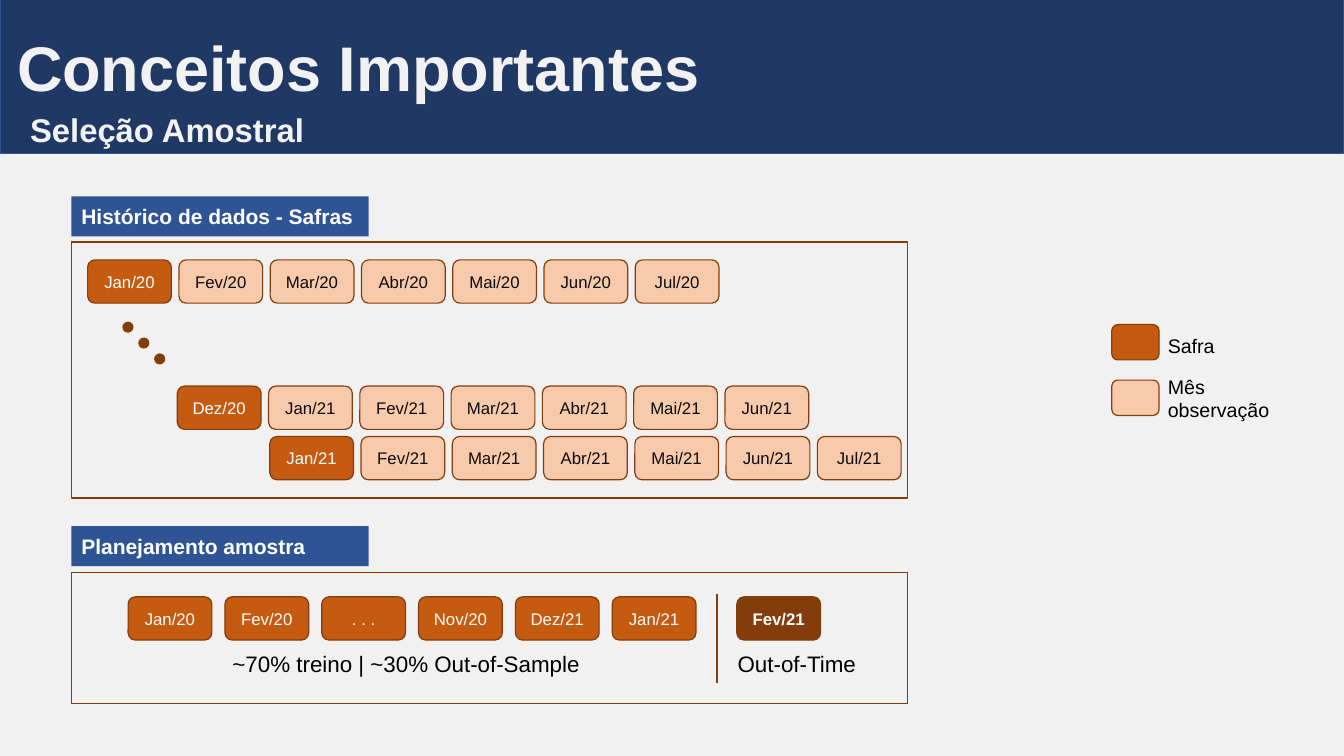
import pptx
import pptx.dml.color
import pptx.enum.shapes
import pptx.enum.text
import pptx.util
from lxml import etree

Cm, Pt = pptx.util.Cm, pptx.util.Pt
SHAPE = pptx.enum.shapes.MSO_SHAPE
ALIGN = pptx.enum.text.PP_ALIGN
ANCHOR = pptx.enum.text.MSO_ANCHOR

COLORS = {
    "background": "F2F1F1", "banner": "1F3864", "banner_edge": "31538F",
    "heading": "2F5496", "vintage": "C55A11", "month": "F7CAAC",
    "brown": "833C0B", "white": "FFFFFF", "light": "F2F2F2",
    "dark": "0C0C0C", "black": "000000",
}

BANNER_TEXTS = [
    ("Conceitos Importantes", (0.18, 0.66, 24.03, 2.08), 45),
    ("Seleção Amostral", (0.51, 2.46, 8.56, 1.42), 23.4),
]
SECTIONS = [
    ("Histórico de dados - Safras", 4.95, 6.1, 6.45),
    ("Planejamento amostra", 13.26, 14.43, 3.3),
]
VINTAGE_ROWS = [
    (2.21, 6.55, ["Jan/20", "Fev/20", "Mar/20", "Abr/20", "Mai/20", "Jun/20", "Jul/20"]),
    (4.47, 9.73, ["Dez/20", "Jan/21", "Fev/21", "Mar/21", "Abr/21", "Mai/21", "Jun/21"]),
    (6.8, 11, ["Jan/21", "Fev/21", "Mar/21", "Abr/21", "Mai/21", "Jun/21", "Jul/21"]),
]
SAMPLE_MONTHS = ["Jan/20", "Fev/20", ". . .", "Nov/20", "Dez/21", "Jan/21"]
OUT_OF_TIME_MONTH = "Fev/21"
SAMPLE_CAPTIONS = [
    ("~70% treino | ~30% Out-of-Sample", (5.61, 16.26, 10.8, 0.94)),
    ("Out-of-Time", (18.34, 16.26, 3.51, 0.94)),
]
LEGEND = [
    ("Safra", "vintage", 8.18, (29.18, 8.28, 2.39, 0.86)),
    ("Mês observação", "month", 9.58, (29.18, 9.32, 3.58, 1.45)),
]

SLIDE_WIDTH, SLIDE_HEIGHT = 33.87, 19.05
MONTH_WIDTH, MONTH_HEIGHT = 2.11, 1.09
VINTAGE_PITCH, SAMPLE_PITCH = 2.3, 2.44
SAMPLE_LEFT, SAMPLE_TOP, OUT_OF_TIME_LEFT = 3.23, 15.04, 18.57
PANEL_LEFT, PANEL_WIDTH = 1.8, 21.08
HEADING_WIDTH, HEADING_HEIGHT = 7.49, 1.01
DOT_LEFT, DOT_TOP, DOT_SIZE, DOT_STEP = 3.1, 8.12, 0.25, 0.4
DIVIDER_X, DIVIDER_TOP, DIVIDER_BOTTOM = 18.08, 14.96, 17.2


def rgb(name):
    return pptx.dml.color.RGBColor.from_string(COLORS[name])


def write(shape, text, size, color, bold=False, align=ALIGN.LEFT, anchor=ANCHOR.MIDDLE):
    frame = shape.text_frame
    frame.word_wrap = True
    frame.vertical_anchor = anchor
    frame.text = text
    paragraph = frame.paragraphs[0]
    paragraph.alignment = align
    font = paragraph.runs[0].font
    font.name, font.size, font.bold = "Arial", Pt(size), bold
    font.color.rgb = rgb(color)


def add_box(slide, preset, bounds, fill=None, line=None):
    box = slide.shapes.add_shape(preset, *map(Cm, bounds))
    box.shadow.inherit = False
    if fill:
        box.fill.solid()
        box.fill.fore_color.rgb = rgb(fill)
    else:
        box.fill.background()
    if line:
        box.line.color.rgb = rgb(line)
        box.line.width = Pt(0.85)
    else:
        box.line.fill.background()
    return box


def add_month(slide, left, top, month, fill, color="white", bold=False):
    bounds = (left, top, MONTH_WIDTH, MONTH_HEIGHT)
    box = add_box(slide, SHAPE.ROUNDED_RECTANGLE, bounds, fill, "brown")
    write(box, month, 12, color, bold, ALIGN.CENTER)


def add_label(slide, text, bounds, size, color="black", bold=False, anchor=ANCHOR.TOP):
    label = slide.shapes.add_textbox(*map(Cm, bounds))
    write(label, text, size, color, bold, anchor=anchor)


def add_divider(slide):
    divider = slide.shapes.add_connector(
        pptx.enum.shapes.MSO_CONNECTOR.STRAIGHT,
        Cm(DIVIDER_X), Cm(DIVIDER_TOP), Cm(DIVIDER_X), Cm(DIVIDER_BOTTOM))
    divider.line.color.rgb = rgb("brown")
    divider.line.width = Pt(1.5)
    etree.SubElement(divider._element.spPr, pptx.oxml.ns.qn("a:effectLst"))


def main():
    """Build the sample selection slide."""
    deck = pptx.Presentation()
    deck.slide_width, deck.slide_height = Cm(SLIDE_WIDTH), Cm(SLIDE_HEIGHT)
    slide = deck.slides.add_slide(deck.slide_layouts[6])
    slide.background.fill.solid()
    slide.background.fill.fore_color.rgb = rgb("background")

    add_box(slide, SHAPE.RECTANGLE, (0, -0.05, SLIDE_WIDTH, 3.91), "banner", "banner_edge")
    for text, bounds, size in BANNER_TEXTS:
        add_label(slide, text, bounds, size, "light", True, ANCHOR.BOTTOM)

    for title, heading_top, panel_top, panel_height in SECTIONS:
        heading = add_box(slide, SHAPE.RECTANGLE,
                          (PANEL_LEFT, heading_top, HEADING_WIDTH, HEADING_HEIGHT), "heading")
        write(heading, title, 15, "white", True)
        add_box(slide, SHAPE.RECTANGLE,
                (PANEL_LEFT, panel_top, PANEL_WIDTH, panel_height), line="brown")

    for left, top, (vintage, *months) in VINTAGE_ROWS:
        add_month(slide, left, top, vintage, "vintage")
        for step, month in enumerate(months, 1):
            add_month(slide, left + step * VINTAGE_PITCH, top, month, "month", "dark")

    for step in range(3):
        offset = step * DOT_STEP
        add_box(slide, SHAPE.OVAL, (DOT_LEFT + offset, DOT_TOP + offset, DOT_SIZE, DOT_SIZE),
                "brown", "brown")

    for text, fill, key_top, bounds in LEGEND:
        add_box(slide, SHAPE.ROUNDED_RECTANGLE, (28.02, key_top, 1.19, 0.89), fill, "brown")
        add_label(slide, text, bounds, 14)

    for step, month in enumerate(SAMPLE_MONTHS):
        add_month(slide, SAMPLE_LEFT + step * SAMPLE_PITCH, SAMPLE_TOP, month, "vintage")
    add_month(slide, OUT_OF_TIME_LEFT, SAMPLE_TOP, OUT_OF_TIME_MONTH, "brown", bold=True)
    for text, bounds in SAMPLE_CAPTIONS:
        add_label(slide, text, bounds, 16)
    add_divider(slide)

    deck.save("out.pptx")


if __name__ == "__main__":
    main()
